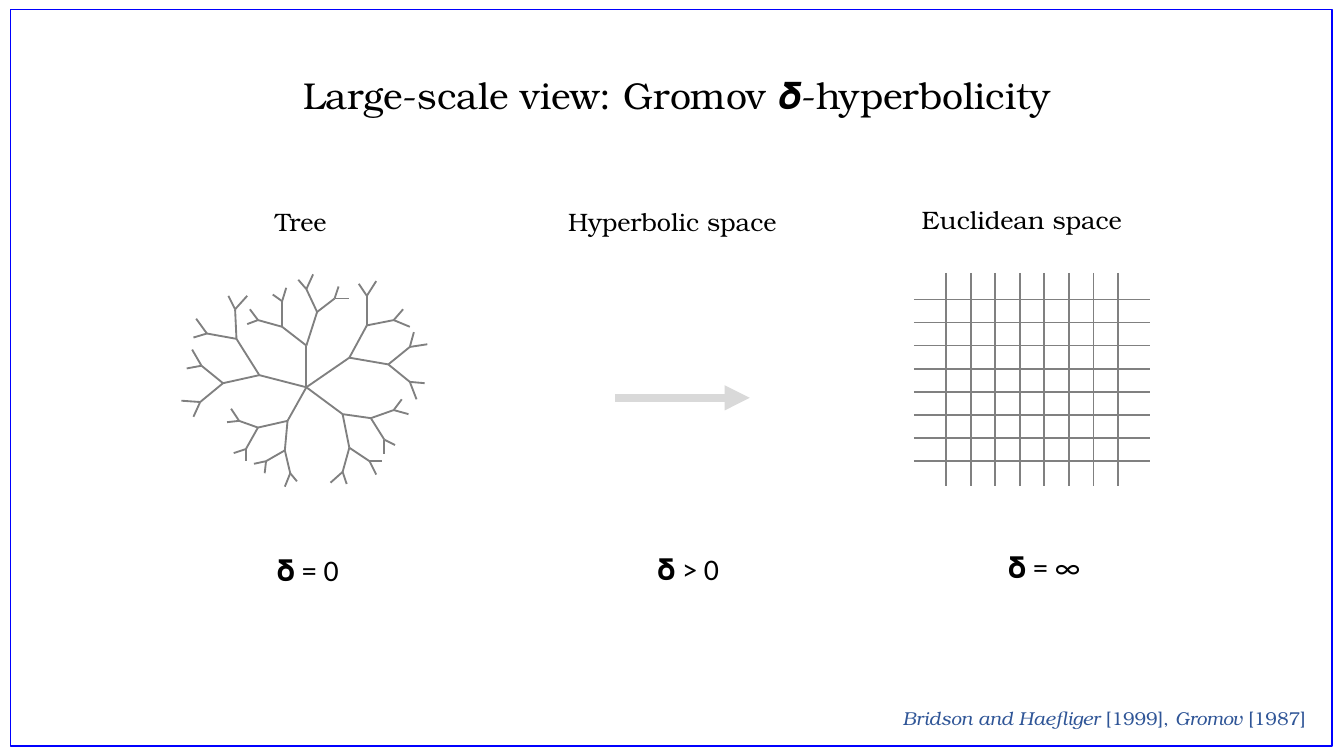
"""Build a slide that compares a tree, hyperbolic space and Euclidean space by Gromov hyperbolicity."""
import lxml.etree
import pptx
import pptx.dml.color
import pptx.enum.shapes
import pptx.enum.text
import pptx.oxml.ns
import pptx.util
from pptx.util import Cm

BLACK = pptx.dml.color.RGBColor(0x00, 0x00, 0x00)
BLUE = pptx.dml.color.RGBColor(0x00, 0x00, 0xFF)
NAVY = pptx.dml.color.RGBColor(0x2F, 0x55, 0x97)
GRAY = pptx.dml.color.RGBColor(0x80, 0x80, 0x80)
SILVER = pptx.dml.color.RGBColor(0xD9, 0xD9, 0xD9)
SERIF = "TeX Gyre Bonum"
SANS = "Calibri"


def write_text(box, *pieces, size, font=SERIF, color=BLACK, wrap=False, align=None):
    """Write (text, italic) pieces as one paragraph."""
    frame = box.text_frame
    frame.word_wrap = wrap
    frame.vertical_anchor = pptx.enum.text.MSO_ANCHOR.TOP
    para = frame.paragraphs[0]
    para.alignment = align
    for text, italic in pieces:
        span = para.add_run()
        span.text = text
        span.font.name = font
        span.font.size = pptx.util.Pt(size)
        span.font.italic = italic
        span.font.color.rgb = color


def draw_line(shapes, start, end, color=GRAY, width=1, arrow=False):
    """Draw a straight line between two points given in centimetres."""
    line = shapes.add_connector(
        pptx.enum.shapes.MSO_CONNECTOR.STRAIGHT,
        Cm(start[0]), Cm(start[1]), Cm(end[0]), Cm(end[1]))
    line.line.color.rgb = color
    line.line.width = pptx.util.Pt(width)
    properties = line._element.spPr
    if arrow:
        outline = properties.find(pptx.oxml.ns.qn("a:ln"))
        lxml.etree.SubElement(outline, pptx.oxml.ns.qn("a:tailEnd"), type="triangle")
    lxml.etree.SubElement(properties, pptx.oxml.ns.qn("a:effectLst"))


deck = pptx.Presentation()
deck.slide_width = Cm(25.4)
deck.slide_height = Cm(14.29)
slide = deck.slides.add_slide(deck.slide_layouts[5])

border = slide.shapes.add_shape(
    pptx.enum.shapes.MSO_SHAPE.RECTANGLE, Cm(0.2), Cm(0.18), Cm(24.97), Cm(13.92))
border.fill.background()
border.line.color.rgb = BLUE
border.line.width = pptx.util.Pt(1)
border.shadow.inherit = False

title = slide.shapes.title
title.left, title.top, title.width, title.height = Cm(0.2), Cm(1.24), Cm(24.97), Cm(1.12)
write_text(title, (" Large-scale view: Gromov 𝜹-hyperbolicity", False), size=20,
           wrap=True, align=pptx.enum.text.PP_ALIGN.CENTER)

LABELS = [
    ("Tree", 4.95, 3.78, 1.52, SERIF, 13.5),
    ("Hyperbolic space", 10.49, 3.78, 4.5, SERIF, 13.5),
    ("Euclidean space", 17.17, 3.73, 4.34, SERIF, 13.5),
    ("𝛅 = 0", 4.98, 10.31, 1.68, SANS, 16),
    ("𝛅 > 0", 12.17, 10.29, 1.68, SANS, 16),
    ("𝛅 = ∞", 18.8, 10.24, 1.88, SANS, 16),
]
for text, left, top, width, font, size in LABELS:
    box = slide.shapes.add_textbox(Cm(left), Cm(top), Cm(width), Cm(0.9))
    write_text(box, (text, False), size=size, font=font)

citation = slide.shapes.add_textbox(Cm(16.81), Cm(13.23), Cm(8.36), Cm(0.69))
write_text(citation, ("Bridson and Haefliger", True), (" [1999], ", False),
           ("Gromov", True), (" [1987]", False), size=10, color=NAVY)

ROOT = (5.79, 7.32)
TREE_UNIT = 2.54 / 100
BRANCHES = [
    [(0, -31), (8, -56), (-18, -45),
     (21, -66), (0, -73), (-18, -64), (-36, -50),
     (32, -66), (24, -75), (5, -84), (-6, -80),
     (-15, -74), (-25, -69), (-42, -58), (-44, -47)],
    [(-14, 25), (-36, 30), (-16, 47),
     (-50, 25), (-45, 46), (-30, 55), (-12, 64),
     (-56, 16), (-59, 26), (-54, 49), (-45, 55),
     (-39, 57), (-31, 64), (-16, 74), (-7, 70)],
    [(27, 20), (32, 45), (48, 23),
     (27, 63), (47, 55), (58, 39), (65, 17),
     (18, 71), (30, 72), (52, 65), (56, 55),
     (58, 50), (66, 43), (76, 20), (71, 9)],
    [(32, -22), (61, -17), (45, -46),
     (77, -4), (77, -30), (65, -50), (45, -68),
     (82, 9), (88, -3), (90, -32), (80, -41),
     (77, -45), (72, -58), (52, -79), (39, -77)],
    [(-35, -9), (-52, -36), (-62, -3),
     (-53, -58), (-74, -40), (-78, -16), (-79, 11),
     (-44, -68), (-58, -68), (-82, -51), (-84, -37),
     (-85, -28), (-89, -14), (-93, 10), (-84, 22)],
]
tree = slide.shapes.add_group_shape()
for branch in BRANCHES:
    nodes = [(ROOT[0] + x * TREE_UNIT, ROOT[1] + y * TREE_UNIT) for x, y in branch]
    for index, node in enumerate(nodes):
        parent = nodes[(index - 1) // 2] if index else ROOT
        draw_line(tree.shapes, parent, node)

GRID_LINES = 8
ROW_GAP = (8.71 - 5.66) / (GRID_LINES - 1)
COLUMN_GAP = (21.13 - 17.88) / (GRID_LINES - 1)
grid = slide.shapes.add_group_shape()
for index in range(GRID_LINES):
    y = 5.66 + index * ROW_GAP
    x = 17.88 + index * COLUMN_GAP
    draw_line(grid.shapes, (17.27, y), (21.74, y))
    draw_line(grid.shapes, (x, 5.16), (x, 9.19))

draw_line(slide.shapes, (11.63, 7.52), (14.17, 7.52), color=SILVER, width=4.5, arrow=True)

deck.save("out.pptx")
